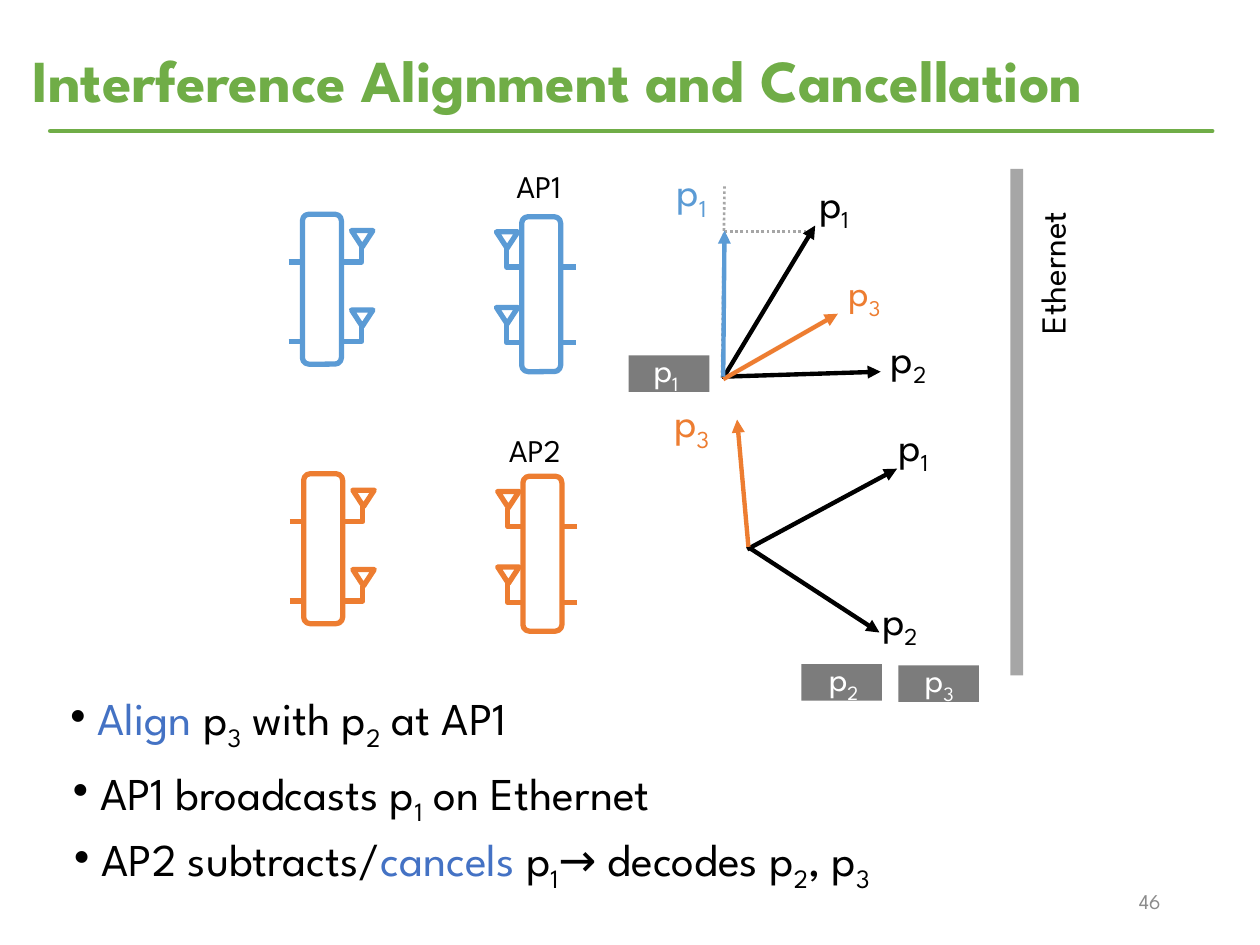
import pptx
import pptx.util
import pptx.dml.color
import pptx.enum.dml
import pptx.enum.shapes
import pptx.enum.text
import pptx.oxml
import pptx.oxml.ns

Inches, Pt = pptx.util.Inches, pptx.util.Pt
RGB = pptx.dml.color.RGBColor
SHAPE = pptx.enum.shapes.MSO_SHAPE
CONNECTOR = pptx.enum.shapes.MSO_CONNECTOR
ALIGN = pptx.enum.text.PP_ALIGN
ANCHOR = pptx.enum.text.MSO_ANCHOR
AUTO = pptx.enum.text.MSO_AUTO_SIZE
qn = pptx.oxml.ns.qn

FONT = "League Spartan"
GREEN, BLUE, ORANGE = RGB(0x70, 0xAD, 0x47), RGB(0x5B, 0x9B, 0xD5), RGB(0xED, 0x7D, 0x31)
ACCENT, BLACK, WHITE = RGB(0x44, 0x72, 0xC4), RGB(0, 0, 0), RGB(0xFF, 0xFF, 0xFF)
GRAY, DARK_GRAY, NUMBER_GRAY = RGB(0xA6, 0xA6, 0xA6), RGB(0x7C, 0x7C, 0x7C), RGB(0x8C, 0x8C, 0x8C)


def add_child(parent, tag, **attributes):
    child = pptx.oxml.parse_xml(f"<{tag} {pptx.oxml.ns.nsdecls('a')}/>")
    for name, value in attributes.items():
        child.set(name, value)
    parent.append(child)


def add_run(p, text, color, size, bold, subscript):
    r = p.add_run()
    r.text = text
    for name, value in {"name": FONT, "size": Pt(size), "bold": bold}.items():
        setattr(r.font, name, value)
    r.font.color.rgb = color
    if subscript:
        r.font._element.set("baseline", "-25000")


def add_text(s, box, parts, size, bold=False, wrap=True, bullet=False,
             align=ALIGN.LEFT, anchor=ANCHOR.TOP, auto=AUTO.SHAPE_TO_FIT_TEXT):
    shape = s.shapes.add_textbox(*map(Inches, box))
    tf = shape.text_frame
    for name, value in {"word_wrap": wrap, "auto_size": auto, "vertical_anchor": anchor}.items():
        setattr(tf, name, value)
    p = tf.paragraphs[0]
    p.alignment = align
    if bullet:
        pPr = p._p.get_or_add_pPr()
        pPr.set("marL", "0")
        pPr.set("indent", "0")
        add_child(pPr, "a:buChar", char="•")
    for text, color in parts:
        plain, *marked = text.split("_")
        add_run(p, plain, color, size, bold, False)
        for piece in marked:
            add_run(p, piece[0], color, size, bold, True)
            if piece[1:]:
                add_run(p, piece[1:], color, size, bold, False)
    return shape


def add_block(s, kind, box, fill, line=None):
    shape = s.shapes.add_shape(kind, *map(Inches, box))
    shape.shadow.inherit = False
    shape.fill.solid()
    shape.fill.fore_color.rgb = fill
    if line is None:
        shape.line.fill.background()
    else:
        shape.line.color.rgb = line
        shape.line.width = Pt(3)
    return shape


def add_line(s, start, end, color, width, kind=CONNECTOR.STRAIGHT, arrow=False, dotted=False):
    line = s.shapes.add_connector(kind, *map(Inches, (*start, *end)))
    line.line.color.rgb = color
    line.line.width = Pt(width)
    spPr = line._element.spPr
    if kind == CONNECTOR.ELBOW:
        spPr.find(qn("a:prstGeom")).set("prst", "bentConnector2")
    if dotted:
        line.line.dash_style = pptx.enum.dml.MSO_LINE.ROUND_DOT
    if arrow:
        add_child(spPr.find(qn("a:ln")), "a:tailEnd", type="triangle")
    add_child(spPr, "a:effectLst")
    return line


def add_header(s, left, top, width, height):
    rule = add_line(s, (left + 0.24, top + 0.75), (left + 9.46, top + 0.75), GREEN, 2.75)
    rule.line._ln.set("cap", "rnd")
    title = add_text(s, (left, top, width, height),
                     [("Interference Alignment and Cancellation", GREEN)], 34, bold=True,
                     anchor=ANCHOR.MIDDLE, auto=AUTO.NONE)
    title.text_frame.paragraphs[0].line_spacing = 0.9


def add_node_pair(s, left, top, color, label, label_box):
    for row in range(2):
        for wire_x, wire_y, mast_x, mast_y, step in ((0, 0.38, 0.58, 0.26, 0.63),
                                                      (2.28, 0.42, 1.73, 0.27, 0.6)):
            y = top + row * step
            add_line(s, (left + wire_x, y + wire_y), (left + mast_x, y + mast_y),
                     color, 3, CONNECTOR.ELBOW)
            antenna = add_block(s, SHAPE.ISOSCELES_TRIANGLE,
                                (left + mast_x - 0.08, y + mast_y - 0.13, 0.17, 0.13), WHITE, color)
            antenna.rotation = 180
    for x, y, height in ((0.11, 0, 1.19), (1.85, 0.02, 1.23)):
        add_block(s, SHAPE.ROUNDED_RECTANGLE, (left + x, top + y, 0.31, height), WHITE, color)
    add_text(s, label_box, [(label, BLACK)], 18, wrap=False)


def add_vectors(s, left, top, arrows, labels):
    for x1, y1, x2, y2, color in arrows:
        add_line(s, (left + x1, top + y1), (left + x2, top + y2), color, 2.5, arrow=True)
    for x, y, width, size, text, color in labels:
        add_text(s, (left + x, top + y, width, 0.5), [(text, color)], size)


def add_ap1_vectors(s, left, top):
    for start, end in (((0.54, 1.74), (0.56, 0.22)), ((1.25, 0.58), (0.55, 0.58))):
        add_line(s, (left + start[0], top + start[1]), (left + end[0], top + end[1]),
                 GRAY, 1.5, dotted=True)
    add_vectors(s, left, top,
                [(0.54, 1.73, 1.8, 1.69, BLACK), (0.55, 1.74, 1.28, 0.53, BLACK),
                 (0.55, 1.75, 1.46, 1.23, ORANGE), (0.55, 1.73, 0.56, 0.57, BLUE)],
                [(0, 0, 0.78, 24, " p_1", BLUE), (1.13, 0.09, 0.78, 24, " p_1", BLACK),
                 (1.37, 0.82, 0.72, 22, " p_3", ORANGE), (1.7, 1.32, 0.78, 24, " p_2", BLACK)])


def add_ap2_vectors(s, left, top):
    add_vectors(s, left, top,
                [(0.76, 1.27, 1.95, 0.63, BLACK), (0.78, 1.26, 1.81, 1.93, BLACK),
                 (0.77, 1.25, 0.68, 0.24, ORANGE)],
                [(0, 0, 0.97, 24, " p_3", ORANGE), (1.78, 0.19, 0.78, 24, " p_1", BLACK),
                 (1.65, 1.57, 0.78, 24, " p_2", BLACK)])


def add_packet(s, left, top, text, text_x, text_width):
    add_block(s, SHAPE.RECTANGLE, (left, top, 0.64, 0.29), DARK_GRAY)
    add_text(s, (left + text_x, top - 0.11, text_width, 0.44), [(text, WHITE)], 20, wrap=False)


def add_ethernet(s, left, top, width, height):
    add_block(s, SHAPE.RECTANGLE, (left, top, width, height), GRAY)
    label = add_text(s, (left - 0.55, top + 0.31, 1.76, 0.44), [("Ethernet", BLACK)], 20)
    label.rotation = 270


def add_steps(s):
    steps = (
        ((0.46, 5.43, 4.92, 0.54), [(" ", BLACK), ("Align", ACCENT), (" p_3 with p_2 at AP1", BLACK)]),
        ((0.48, 6.02, 9.4, 0.54), [(" AP1 broadcasts p_1 on Ethernet", BLACK)]),
        ((0.49, 6.55, 10.31, 0.54), [(" AP2 subtracts/", BLACK), ("cancels ", ACCENT),
                                     ("p_1→ decodes p_2, p_3", BLACK)]),
    )
    for box, parts in steps:
        add_text(s, box, parts, 26, bullet=True)


def main():
    prs = pptx.Presentation()
    prs.slide_width, prs.slide_height = Inches(10), Inches(7.5)
    s = prs.slides.add_slide(prs.slide_layouts[6])
    add_header(s, 0.16, 0.29, 9.7, 0.74)
    add_ethernet(s, 8.02, 1.34, 0.1, 4.02)
    add_ap1_vectors(s, 5.19, 1.26)
    add_ap2_vectors(s, 5.17, 3.09)
    add_packet(s, 4.99, 2.82, " p_1", 0.03, 0.57)
    add_packet(s, 6.36, 5.27, "p_2", 0.12, 0.5)
    add_packet(s, 7.13, 5.28, "p_3", 0.11, 0.5)
    add_node_pair(s, 2.29, 1.7, BLUE, "AP1", (4, 1.28, 0.68, 0.4))
    add_node_pair(s, 2.3, 3.76, ORANGE, "AP2", (3.94, 3.37, 0.68, 0.4))
    add_steps(s)
    add_text(s, (7.06, 6.95, 2.25, 0.4), [("46", NUMBER_GRAY)], 12,
             align=ALIGN.RIGHT, anchor=ANCHOR.MIDDLE, auto=AUTO.NONE)
    prs.save("out.pptx")


if __name__ == "__main__":
    main()
